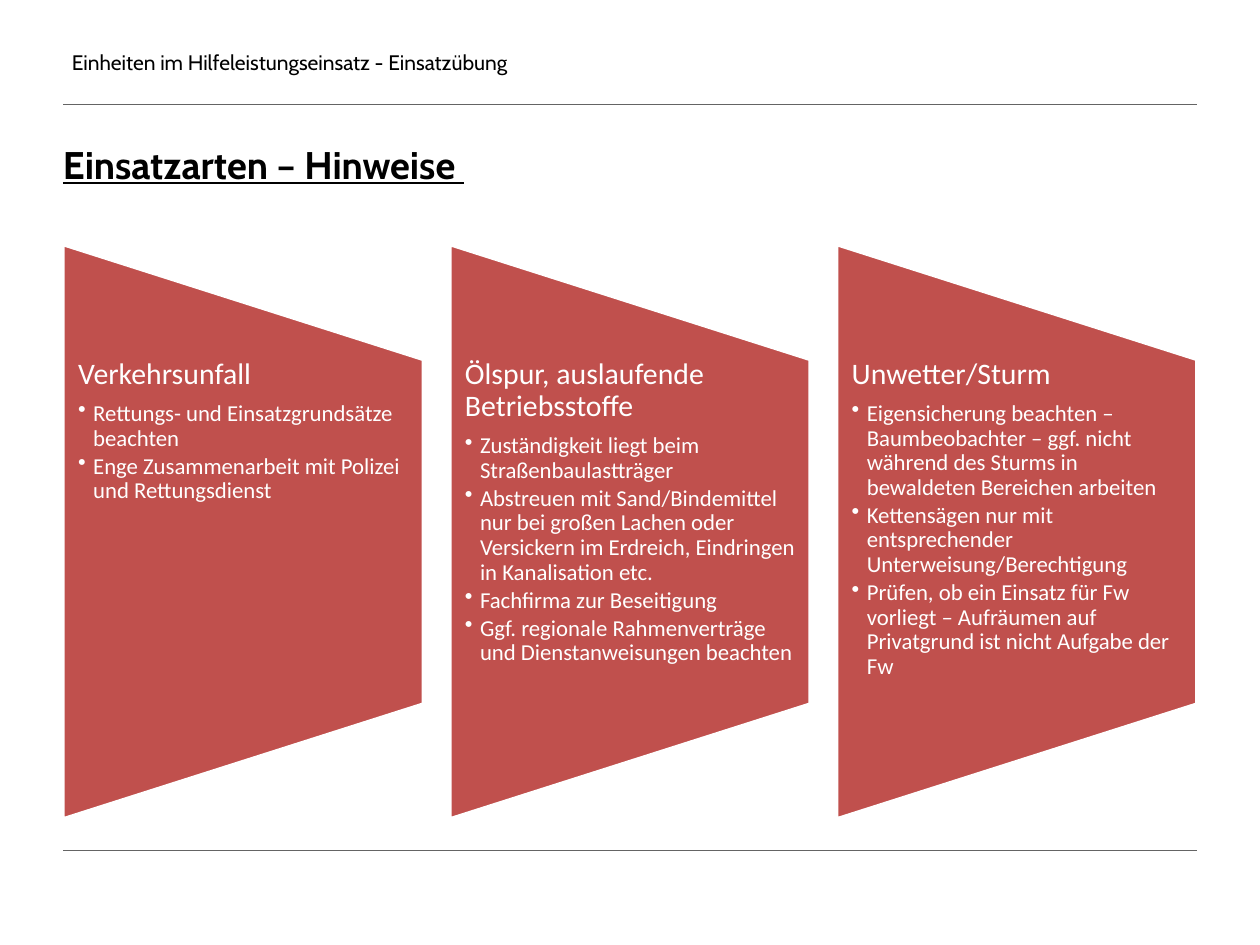
from lxml.etree import SubElement
from pptx import Presentation
from pptx.dml.color import RGBColor
from pptx.enum.shapes import MSO_CONNECTOR, MSO_SHAPE
from pptx.enum.text import MSO_ANCHOR
from pptx.oxml.ns import qn
from pptx.util import Inches, Pt

BLACK, WHITE, RED, GRAY = "000000", "FFFFFF", "C0504D", "646464"
MARGIN = 0.5
PANEL_WIDTH, PANEL_HEIGHT, PANEL_STEP = 2.86, 4.56, 3.07
PANEL_CENTER = 4.22
TEXT_TOP, TEXT_HEIGHT = 2.85, 2.74

PANELS = [
    ("Verkehrsunfall", [
        "Rettungs- und Einsatzgrundsätze beachten",
        "Enge Zusammenarbeit mit Polizei und Rettungsdienst",
    ]),
    ("Ölspur, auslaufende Betriebsstoffe", [
        "Zuständigkeit liegt beim Straßenbaulastträger",
        "Abstreuen mit Sand/Bindemittel nur bei großen Lachen oder Versickern im Erdreich, "
        "Eindringen in Kanalisation etc.",
        "Fachfirma zur Beseitigung",
        "Ggf. regionale Rahmenverträge und Dienstanweisungen beachten",
    ]),
    ("Unwetter/Sturm", [
        "Eigensicherung beachten – Baumbeobachter – ggf. nicht während des Sturms in "
        "bewaldeten Bereichen arbeiten",
        "Kettensägen nur mit entsprechender Unterweisung/Berechtigung",
        "Prüfen, ob ein Einsatz für Fw vorliegt – Aufräumen auf Privatgrund ist nicht "
        "Aufgabe der Fw",
    ]),
]


def color(value):
    """Turn a hex string into a colour."""
    return RGBColor.from_string(value)


def add_rule(slide, top):
    """Draw a thin horizontal line between the margins."""
    line = slide.shapes.add_connector(
        MSO_CONNECTOR.STRAIGHT, Inches(MARGIN), Inches(top), Inches(10 - MARGIN), Inches(top))
    line.line.color.rgb = color(GRAY)
    line.line.width = Pt(0.25)
    SubElement(line._element.spPr, qn("a:effectLst"))


def add_text_frame(slide, left, top, width, height, inset_left=0, inset_right=0):
    """Add a wrapping text box and return its frame."""
    box = slide.shapes.add_textbox(Inches(left), Inches(top), Inches(width), Inches(height))
    frame = box.text_frame
    frame.word_wrap = True
    frame.margin_left, frame.margin_right = Inches(inset_left), Inches(inset_right)
    frame.margin_top = frame.margin_bottom = 0
    return frame


def add_run(paragraph, text, size, font, hex_color):
    """Add a formatted run and return it."""
    run = paragraph.add_run()
    run.text = text
    run.font.size = Pt(size)
    run.font.name = font
    run.font.color.rgb = color(hex_color)
    return run


def set_bullet(paragraph):
    """Give a paragraph a hanging round bullet."""
    properties = paragraph._p.get_or_add_pPr()
    properties.set("marL", str(Inches(0.12)))
    properties.set("indent", str(-Inches(0.12)))
    SubElement(properties, qn("a:buChar")).set("char", "•")


def add_header(slide):
    """Add the running header."""
    frame = add_text_frame(slide, MARGIN, 0.33, 6.08, 0.33, inset_left=0.07)
    frame.vertical_anchor = MSO_ANCHOR.MIDDLE
    add_run(frame.paragraphs[0], "Einheiten im Hilfeleistungseinsatz - Einsatzübung",
            12, "Cabin", BLACK)


def add_title(slide):
    """Add the underlined slide title."""
    paragraph = add_text_frame(slide, MARGIN, 1.15, 7.17, 1.1).paragraphs[0]
    paragraph.line_spacing = Pt(24)
    run = add_run(paragraph, "Einsatzarten – Hinweise ", 22, "Cabin", BLACK)
    run.font.bold = run.font.underline = True


def add_panel(slide, left, heading, points):
    """Add a rotated trapezoid with its heading and bullet points."""
    shape = slide.shapes.add_shape(
        MSO_SHAPE.FLOWCHART_MANUAL_OPERATION,
        Inches(left + (PANEL_WIDTH - PANEL_HEIGHT) / 2), Inches(PANEL_CENTER - PANEL_WIDTH / 2),
        Inches(PANEL_HEIGHT), Inches(PANEL_WIDTH))
    shape.rotation = 270
    shape.shadow.inherit = False
    shape.fill.solid()
    shape.fill.fore_color.rgb = color(RED)
    shape.line.color.rgb = color(WHITE)
    shape.line.width = Pt(2)

    frame = add_text_frame(slide, left, TEXT_TOP, PANEL_WIDTH, TEXT_HEIGHT, 0.12, 0.12)
    paragraph = frame.paragraphs[0]
    paragraph.line_spacing = 0.9
    paragraph.space_after = Pt(6)
    add_run(paragraph, heading, 17, "Calibri", WHITE)
    for point in points:
        paragraph = frame.add_paragraph()
        set_bullet(paragraph)
        paragraph.level = 1
        paragraph.line_spacing = 0.9
        paragraph.space_after = Pt(2)
        add_run(paragraph, point, 13, "Calibri", WHITE)


def main():
    """Build and save the slide."""
    presentation = Presentation()
    presentation.slide_width, presentation.slide_height = Inches(10), Inches(7.5)
    slide = presentation.slides.add_slide(presentation.slide_layouts[6])
    add_rule(slide, 0.83)
    add_header(slide)
    add_rule(slide, 6.75)
    for index, (heading, points) in enumerate(PANELS):
        add_panel(slide, MARGIN + index * PANEL_STEP, heading, points)
    add_title(slide)
    presentation.save("out.pptx")


if __name__ == "__main__":
    main()
